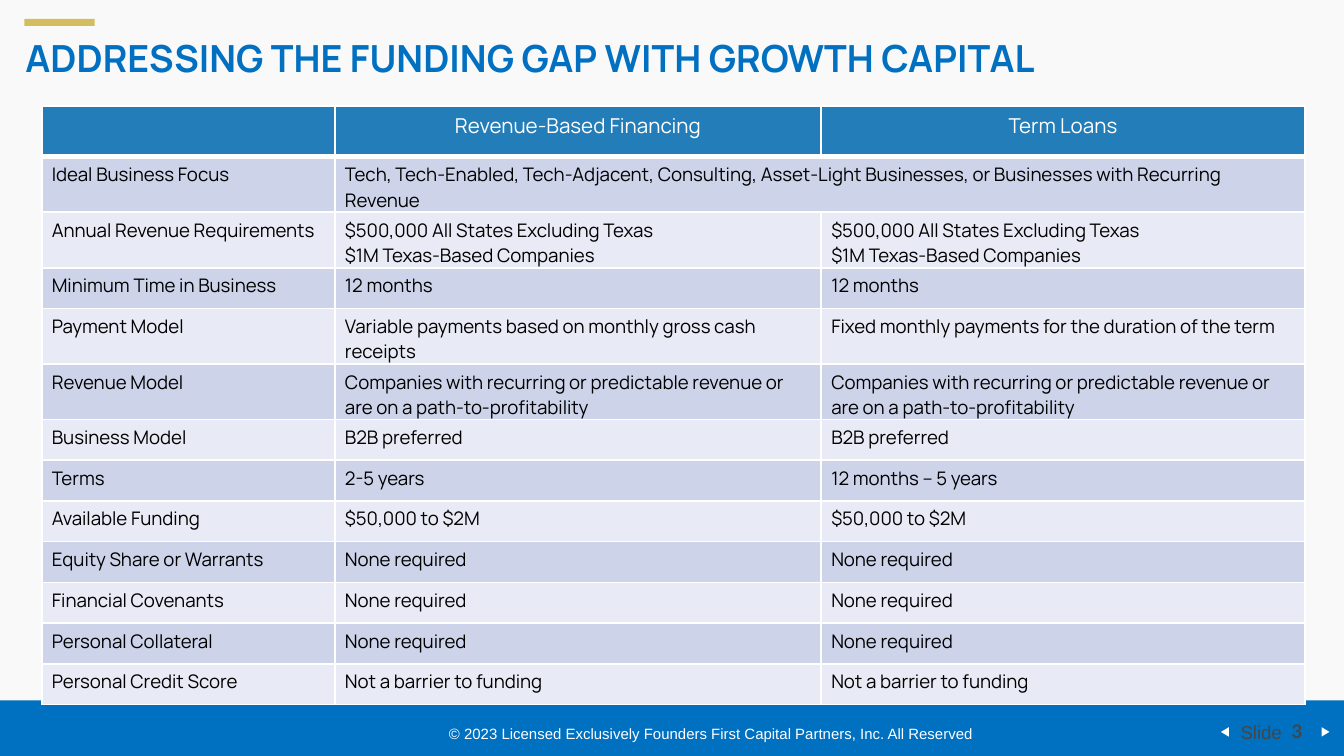
from lxml import etree
from pptx import Presentation, util as u
from pptx.dml.color import RGBColor
from pptx.enum import shapes, text
from pptx.oxml import ns

BLUE, WHITE, GREY = "0170C1", "FFFFFF", "464646"


def rgb(value):
    return RGBColor.from_string(value)


def write(frame, content, align, margins, **font):
    """Fill a text frame, one paragraph per line; margins are (side, top) in cm."""
    side, top = margins
    layout = {"word_wrap": True, "margin_left": u.Cm(side), "margin_right": u.Cm(side),
              "margin_top": u.Cm(top), "margin_bottom": u.Cm(top)}
    for key, value in layout.items():
        setattr(frame, key, value)
    for i, line in enumerate(content.split("\n")):
        paragraph = frame.add_paragraph() if i else frame.paragraphs[0]
        paragraph.alignment = align
        run = paragraph.add_run()
        run.text = line
        for key, value in font.items():
            if key == "color":
                run.font.color.rgb = rgb(value)
            else:
                setattr(run.font, key, value)


LEFT, CENTER = text.PP_ALIGN.LEFT, text.PP_ALIGN.CENTER

deck = Presentation()
deck.slide_width, deck.slide_height = u.Cm(25.4), u.Cm(14.29)
slide = deck.slides.add_slide(deck.slide_layouts[6])
slide.background.fill.solid()
slide.background.fill.fore_color.rgb = rgb("F9F9F9")

# Accent bar, footer band and navigation buttons
RECT, OVAL, ARROW = (shapes.MSO_SHAPE.RECTANGLE, shapes.MSO_SHAPE.OVAL,
                     shapes.MSO_SHAPE.ISOSCELES_TRIANGLE)
for preset, left, top, width, height, color, turn in [
    (RECT, 0.46, 0.36, 1.33, 0.13, "D3BD5F", 0),
    (RECT, 0, 13.24, 25.4, 1.05, "0070C0", 0),
    (OVAL, 24.89, 13.69, 0.3, 0.3, BLUE, 0),
    (OVAL, 23.01, 13.69, 0.3, 0.3, BLUE, 0),
    (ARROW, 24.96, 13.76, 0.18, 0.15, WHITE, 90),
    (ARROW, 23.06, 13.76, 0.18, 0.15, WHITE, 270),
]:
    part = slide.shapes.add_shape(preset, u.Cm(left), u.Cm(top), u.Cm(width), u.Cm(height))
    part.shadow.inherit = False
    part.fill.solid()
    part.fill.fore_color.rgb = rgb(color)
    part.line.fill.background()
    part.rotation = turn

# Footer texts and title
BOX = (0.25, 0.13)
for content, left, top, width, height, align, margins, font in [
    ("Slide", 23.16, 13.49, 1.35, 0.69, CENTER, BOX,
     {"name": "Arial", "size": u.Pt(10), "color": GREY}),
    ("3", 24.21, 13.61, 0.61, 0.36, CENTER, (0, 0),
     {"name": "Lato", "size": u.Pt(10), "color": GREY, "bold": True}),
    ("© 2023 Licensed Exclusively Founders First Capital Partners, Inc. All Reserved",
     6.65, 13.56, 13.59, 0.61, CENTER, BOX,
     {"name": "Arial", "size": u.Pt(8), "color": WHITE}),
    ("ADDRESSING THE FUNDING GAP WITH GROWTH CAPITAL", 0.23, 0.56, 21.89, 1.04, LEFT, BOX,
     {"name": "Manrope", "size": u.Pt(20), "color": BLUE, "bold": True}),
]:
    label = slide.shapes.add_textbox(u.Cm(left), u.Cm(top), u.Cm(width), u.Cm(height))
    write(label.text_frame, content, align, margins, **font)
    if align == LEFT:
        label.text_frame.vertical_anchor = text.MSO_ANCHOR.MIDDLE

# Comparison of the two products; a single entry applies to both
revenue_floor = "$500,000 All States Excluding Texas\n$1M Texas-Based Companies"
revenue_model = ("Companies with recurring or predictable revenue or are on a "
                 "path-to-profitability")
comparison = [
    ("", "Revenue-Based Financing", "Term Loans"),
    ("Ideal Business Focus", "Tech, Tech-Enabled, Tech-Adjacent, Consulting, Asset-Light "
     "Businesses, or Businesses with Recurring Revenue"),
    ("Annual Revenue Requirements", revenue_floor, revenue_floor),
    ("Minimum Time in Business", "12 months", "12 months"),
    ("Payment Model", "Variable payments based on monthly gross cash receipts",
     "Fixed monthly payments for the duration of the term"),
    ("Revenue Model", revenue_model, revenue_model),
    ("Business Model", "B2B preferred", "B2B preferred"),
    ("Terms", "2-5 years", "12 months – 5 years"),
    ("Available Funding", "$50,000 to $2M", "$50,000 to $2M"),
    ("Equity Share or Warrants", "None required", "None required"),
    ("Financial Covenants", "None required", "None required"),
    ("Personal Collateral", "None required", "None required"),
    ("Personal Credit Score", "Not a barrier to funding", "Not a barrier to funding"),
]
column_widths = [5.54, 9.19, 9.14]
row_height = 0.77
table = slide.shapes.add_table(
    len(comparison), len(column_widths), u.Cm(0.79), u.Cm(2), u.Cm(sum(column_widths)),
    u.Cm(row_height * len(comparison))).table
for column, width in zip(table.columns, column_widths):
    column.width = u.Cm(width)

for r, entries in enumerate(comparison):
    table.rows[r].height = u.Cm(row_height)
    header = r == 0
    if len(entries) == 2:
        table.cell(r, 1).merge(table.cell(r, 2))
    for c in range(len(column_widths)):
        cell = table.cell(r, c)
        properties = cell._tc.get_or_add_tcPr()
        for side in ("lnL", "lnR", "lnT", "lnB"):
            thick = (header and side == "lnB") or (r == 1 and side == "lnT")
            border = etree.SubElement(properties, ns.qn(f"a:{side}"),
                                      w=str(u.Pt(3 if thick else 1)))
            paint = etree.SubElement(border, ns.qn("a:solidFill"))
            etree.SubElement(paint, ns.qn("a:srgbClr"), val=WHITE)
        cell.fill.solid()
        cell.fill.fore_color.rgb = rgb("237DB9" if header else ("E8EBF5", "CDD4EA")[r % 2])
        for edge, margin in {"left": 0.19, "right": 0.19, "top": 0.1, "bottom": 0.1}.items():
            setattr(cell, f"margin_{edge}", u.Cm(margin))
        if c < len(entries) and entries[c]:
            write(cell.text_frame, entries[c], CENTER if header else LEFT, (0.19, 0.1),
                  name="Manrope", size=u.Pt(11 if header else 10), bold=False,
                  color=WHITE if header else "000000")

deck.save("out.pptx")
